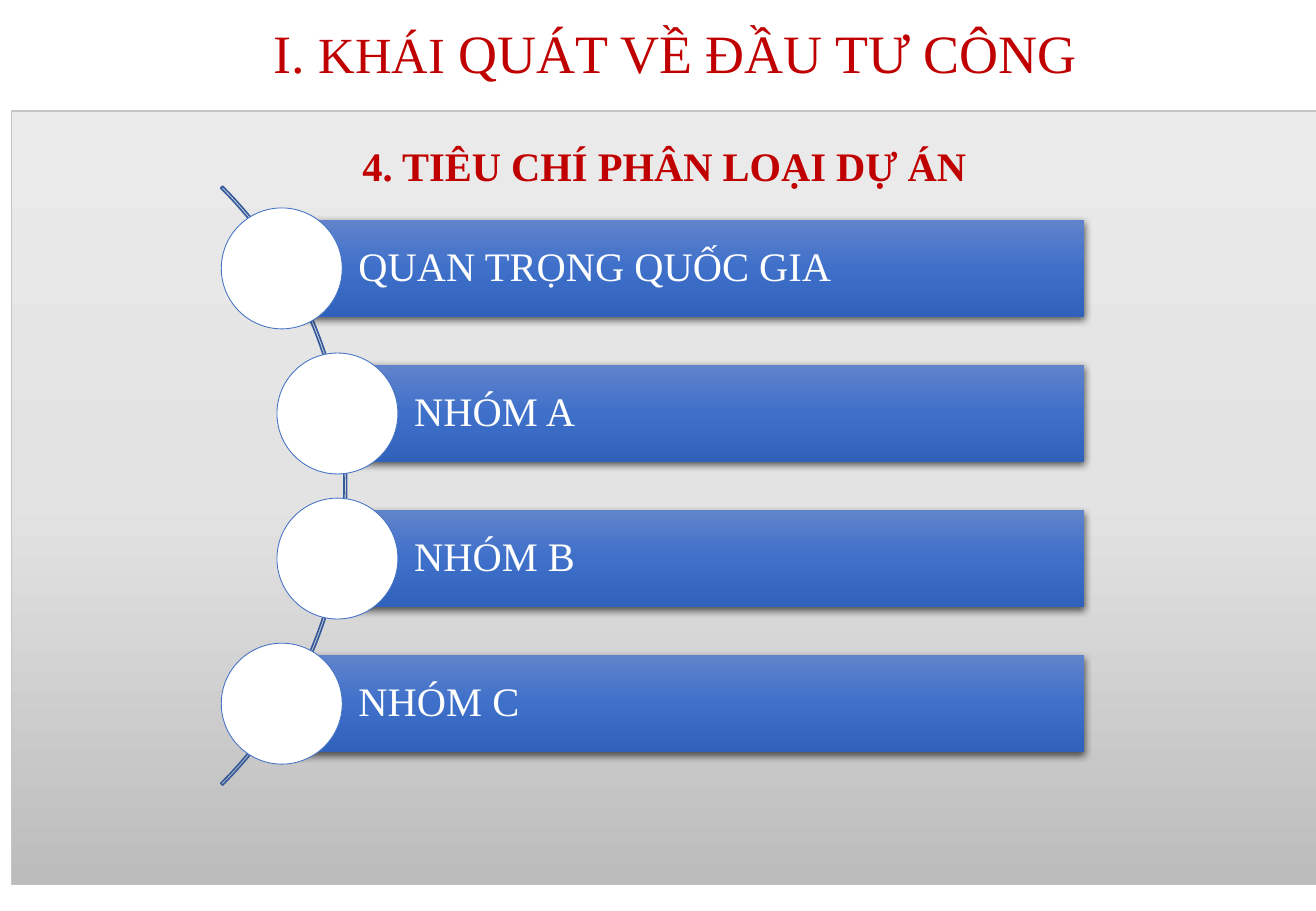
from typing import NamedTuple

from lxml import etree
from pptx import Presentation
from pptx.dml.color import RGBColor
from pptx.enum.shapes import MSO_SHAPE
from pptx.enum.text import MSO_ANCHOR, PP_ALIGN
from pptx.oxml.ns import qn
from pptx.util import Pt

RECT, OVAL, ARC = MSO_SHAPE.RECTANGLE, MSO_SHAPE.OVAL, MSO_SHAPE.BLOCK_ARC
LEFT, CENTER = PP_ALIGN.LEFT, PP_ALIGN.CENTER
TOP, MIDDLE = MSO_ANCHOR.TOP, MSO_ANCHOR.MIDDLE

RED = RGBColor(0xC0, 0x00, 0x00)
WHITE = RGBColor(0xFF, 0xFF, 0xFF)
GRAY = RGBColor(0xC4, 0xC4, 0xC4)
BLUE = RGBColor(0x44, 0x72, 0xC4)
NAVY = RGBColor(0x36, 0x5B, 0x9D)
BLACK = RGBColor(0x00, 0x00, 0x00)
PANEL_FADE = (RGBColor(0xEB, 0xEA, 0xEA), RGBColor(0xE4, 0xE3, 0xE3), RGBColor(0xBD, 0xBC, 0xBC))
BAR_FADE = (RGBColor(0x61, 0x83, 0xCB), RGBColor(0x3E, 0x70, 0xCA), RGBColor(0x30, 0x62, 0xBB))

FONT = "Times New Roman"
FIRST_Y, STEP = 159.1, 86  # row centres
BAR_END, BAR_H, DISC = 642.5, 57.4, 71.7
OUTER_X, INNER_X = 167, 200


class Box(NamedTuple):
    left: float
    top: float
    width: float
    height: float


class Row(NamedTuple):
    text: str
    left: float


ROWS = (
    Row("QUAN TRỌNG QUỐC GIA", OUTER_X),
    Row("NHÓM A", INNER_X),
    Row("NHÓM B", INNER_X),
    Row("NHÓM C", OUTER_X),
)


def add_item(slide, kind: MSO_SHAPE, box: Box):
    shape = slide.shapes.add_shape(kind, *map(Pt, box))
    shape.shadow.inherit = False
    return shape


def set_line(shape, color: RGBColor, width: float) -> None:
    shape.line.color.rgb = color
    shape.line.width = Pt(width)


def add_color(parent, color: RGBColor):
    return etree.SubElement(parent, qn("a:srgbClr"), val=str(color))


def set_fade(shape, colors: tuple[RGBColor, ...]) -> None:
    """Fill from top to bottom with evenly spaced colours."""
    shape.fill.gradient()
    shape.fill.gradient_angle = 270
    stops = shape._element.spPr.find(qn("a:gradFill")).find(qn("a:gsLst"))
    for stop in list(stops):
        stops.remove(stop)
    for i, color in enumerate(colors):
        pos = 100000 * i // (len(colors) - 1)
        add_color(etree.SubElement(stops, qn("a:gs"), pos=str(pos)), color)


def add_shadow(shape) -> None:
    effects = shape._element.spPr.find(qn("a:effectLst"))
    shadow = etree.SubElement(
        effects, qn("a:outerShdw"), blurRad=str(Pt(4.5)), dist=str(Pt(1.5)),
        dir="5400000", algn="ctr", rotWithShape="0")
    etree.SubElement(add_color(shadow, BLACK), qn("a:alpha"), val="63000")


def set_text(shape, text: str, color: RGBColor, align: PP_ALIGN, anchor: MSO_ANCHOR,
             pads: tuple[float, float, float, float], space: float = 0.9, size: float = 24):
    frame = shape.text_frame
    frame.word_wrap = True
    frame.vertical_anchor = anchor
    (frame.margin_left, frame.margin_top,
     frame.margin_right, frame.margin_bottom) = map(Pt, pads)
    para = frame.paragraphs[0]
    para.text = text
    para.alignment = align
    para.line_spacing = space
    font = para.runs[0].font
    font.name, font.size, font.color.rgb = FONT, Pt(size), color
    return para


def add_title(slide) -> None:
    box = slide.shapes.add_textbox(*map(Pt, Box(41, 16, 718.6, 36)))
    para = set_text(box, "I. ", RED, CENTER, TOP, (0, 0, 0, 0), size=32)
    for text, size in (("KHÁI", 30), (" QUÁT VỀ ĐẦU TƯ CÔNG", 32)):
        run = para.add_run()
        run.text = text
        run.font.name, run.font.size, run.font.color.rgb = FONT, Pt(size), RED


def add_panel(slide) -> None:
    panel = add_item(slide, RECT, Box(6.9, 65.8, 780, 458.6))
    set_fade(panel, PANEL_FADE)
    set_line(panel, GRAY, 0.75)
    para = set_text(panel, "4. TIÊU CHÍ PHÂN LOẠI DỰ ÁN", RED, CENTER, TOP,
                    (7.2, 3.6, 13.2, 3.6), space=1.5)
    para.space_before = Pt(8.1)
    para.runs[0].font.bold = True


def add_arc(slide) -> None:
    arc = add_item(slide, ARC, Box(-296.5, 36.9, 502, 502))
    for i, value in enumerate((189, 27, 0.0031)):
        arc.adjustments[i] = value
    arc.fill.background()
    set_line(arc, NAVY, 1)


def add_row(slide, row: Row, mid: float) -> None:
    bar = add_item(slide, RECT, Box(row.left, mid - BAR_H / 2, BAR_END - row.left, BAR_H))
    set_fade(bar, BAR_FADE)
    bar.line.fill.background()
    add_shadow(bar)
    set_text(bar, row.text, WHITE, LEFT, MIDDLE, (45.5, 5, 5, 5))

    disc = add_item(slide, OVAL, Box(row.left - DISC / 2, mid - DISC / 2, DISC, DISC))
    disc.fill.solid()
    disc.fill.fore_color.rgb = WHITE
    set_line(disc, BLUE, 0.5)


def main() -> None:
    deck = Presentation()
    deck.slide_width, deck.slide_height = Pt(780), Pt(540)
    slide = deck.slides.add_slide(deck.slide_layouts[6])

    # Heading and backdrop
    add_title(slide)
    add_panel(slide)

    # Project groups along the arc
    add_arc(slide)
    for i, row in enumerate(ROWS):
        add_row(slide, row, FIRST_Y + i * STEP)

    deck.save("out.pptx")


if __name__ == "__main__":
    main()
